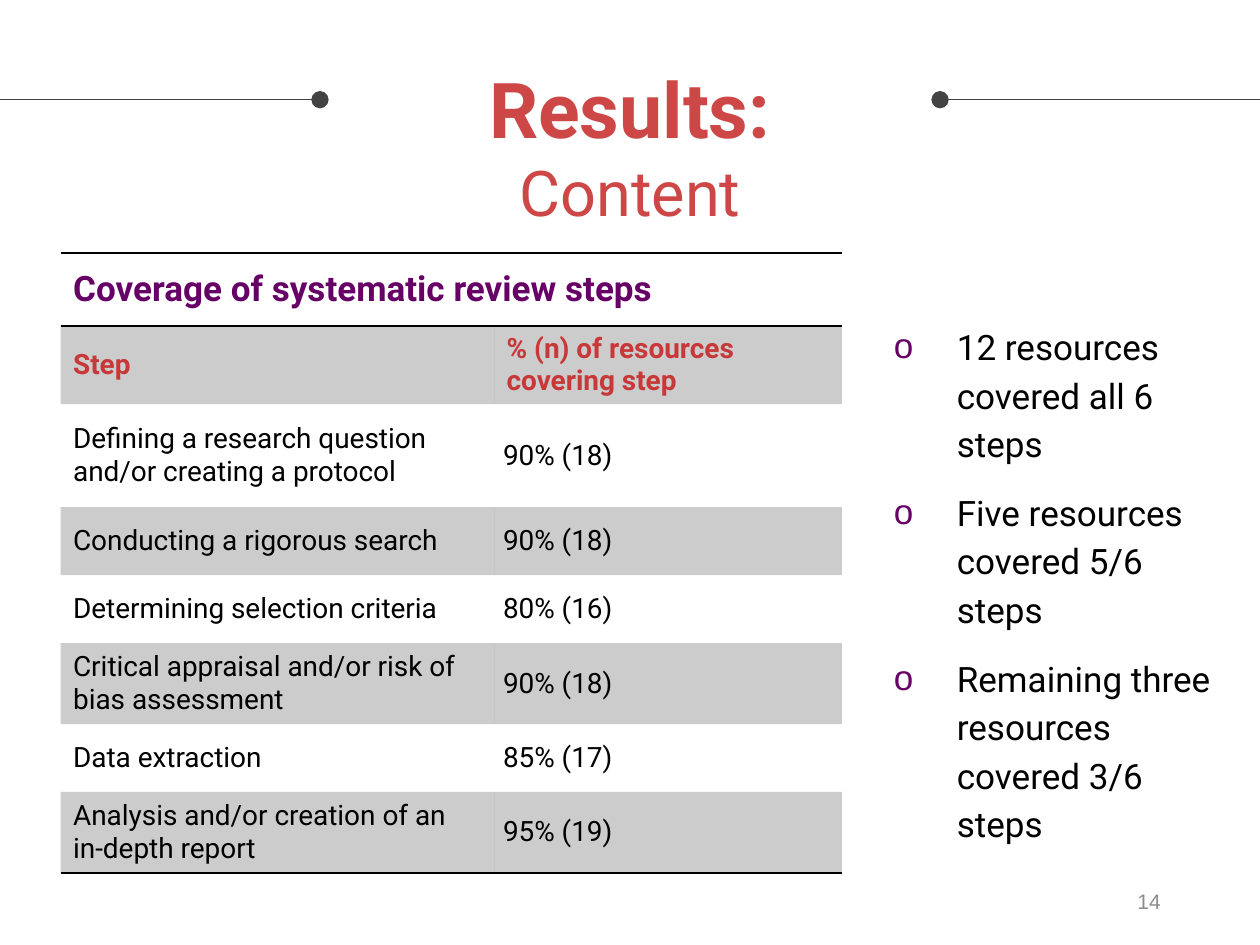
from typing import NamedTuple

from lxml import etree
from pptx import Presentation
from pptx.dml.color import RGBColor
from pptx.enum import shapes, text
from pptx.oxml import ns
from pptx.util import Cm, Pt

RED = RGBColor(0xCD, 0x47, 0x47)
BRICK = RGBColor(0xC8, 0x38, 0x38)
PLUM = RGBColor(0x66, 0x00, 0x66)
BLACK = RGBColor(0, 0, 0)
SLATE = RGBColor(0x43, 0x43, 0x43)
GREY = RGBColor(0x8C, 0x8C, 0x8C)
FACE = "Roboto"
PLAIN = "{2D5ABB26-0587-4C30-8999-92F81FD0307C}"


class Box(NamedTuple):
    left: float
    top: float
    width: float
    height: float


class Row(NamedTuple):
    step: str
    share: str
    height: float


class Rule(NamedTuple):
    start: float
    end: float


RULES = [Rule(6.45, 0), Rule(18.95, 25.4)]
HEAD = Row("Step", "% (n) of resources covering step", 1.22)
STEPS = [
    Row("Defining a research question and/or creating a protocol", "90% (18)", 2.08),
    Row("Conducting a rigorous search", "90% (18)", 1.37),
    Row("Determining selection criteria", "80% (16)", 1.37),
    Row("Critical appraisal and/or risk of bias assessment", "90% (18)", 1.63),
    Row("Data extraction", "85% (17)", 1.37),
    Row("Analysis and/or creation of an in-depth report", "95% (19)", 1.63),
]
NOTES = [
    "12 resources covered all 6 steps",
    "Five resources covered 5/6 steps",
    "Remaining three resources covered 3/6 steps",
]


def add(parent, tag: str, **attrs: str):
    return etree.SubElement(parent, ns.qn(tag), attrs)


def style(font, size: float, color: RGBColor, bold: bool = False, face: str = FACE) -> None:
    font.name, font.size, font.bold = face, Pt(size), bold
    font.color.rgb = color


def place(shape, box: Box) -> None:
    shape.left, shape.top, shape.width, shape.height = map(Cm, box)


def pad(frame, gap: float) -> None:
    frame.margin_left = frame.margin_right = Cm(gap)
    frame.margin_top = frame.margin_bottom = Cm(gap)


def draw_rule(slide, rule: Rule) -> None:
    line = slide.shapes.add_connector(
        shapes.MSO_CONNECTOR.STRAIGHT, Cm(rule.start), Cm(2.01), Cm(rule.end), Cm(2.01))
    line.line.color.rgb = SLATE
    line.line.width = Pt(0.75)
    add(line.line._get_or_add_ln(), "a:headEnd", type="oval", w="lg", len="lg")
    add(line._element.spPr, "a:effectLst")


def draw_title(slide) -> None:
    title = slide.shapes.title
    place(title, Box(5.05, 1.34, 15.3, 3.18))
    frame = title.text_frame
    pad(frame, 0.25)
    frame.auto_size = text.MSO_AUTO_SIZE.NONE
    frame.vertical_anchor = text.MSO_ANCHOR.MIDDLE
    para = frame.paragraphs[0]
    para.alignment = text.PP_ALIGN.CENTER
    top = para.add_run()
    top.text = "Results:"
    style(top.font, 44, RED, True)
    para.add_line_break()
    sub = para.add_run()
    sub.text = "Content"
    style(sub.font, 36, RED)


def edge(cell, *sides: str) -> None:
    props = cell._tc.get_or_add_tcPr()
    for side in sides:
        line = add(props, f"a:ln{side}", w=str(Pt(1)))
        add(add(line, "a:solidFill"), "a:srgbClr", val=str(BLACK))


def shade(cell, dark: bool) -> None:
    if not dark:
        cell.fill.background()
        return
    cell.fill.solid()
    cell.fill.fore_color.rgb = BLACK
    fill = cell._tc.tcPr.find(ns.qn("a:solidFill"))
    add(fill.find(ns.qn("a:srgbClr")), "a:alpha", val="20000")


def write(cell, words: str, size: float, color: RGBColor, bold: bool) -> None:
    cell.vertical_anchor = text.MSO_ANCHOR.MIDDLE
    cell.text = words
    style(cell.text_frame.paragraphs[0].font, size, color, bold)


def draw_table(slide) -> None:
    rows = [HEAD, *STEPS]
    widths = [8.74, 7.01]
    heights = [1.47, *(row.height for row in rows)]
    frame = slide.shapes.add_table(
        len(heights), 2, Cm(1.22), Cm(5.1), Cm(sum(widths)), Cm(sum(heights)))
    table = frame.table
    table.first_row = table.horz_banding = False
    table._tbl.tblPr.find(ns.qn("a:tableStyleId")).text = PLAIN
    for col, width in zip(table.columns, widths):
        col.width = Cm(width)
    for line, height in zip(table.rows, heights):
        line.height = Cm(height)

    top = table.cell(0, 0)
    top.merge(table.cell(0, 1))
    write(top, "Coverage of systematic review steps", 20, PLUM, True)
    for cell in table.rows[0].cells:
        edge(cell, "T", "B")
        shade(cell, False)

    for i, row in enumerate(rows, 1):
        head = row is HEAD
        for j, words in enumerate((row.step, row.share)):
            cell = table.cell(i, j)
            write(cell, words, 16, BRICK if head else BLACK, head)
            if head:
                cell.margin_top = cell.margin_bottom = Cm(0.11)
            elif j:
                pad(cell, 0.18)
            if row is rows[-1]:
                edge(cell, "B")
            shade(cell, i % 2 == 1)
    table.cell(2, 0).text_frame.paragraphs[0].space_after = Pt(12)


def draw_notes(slide) -> None:
    box = slide.shapes.add_textbox(*map(Cm, Box(17.77, 6.19, 7.19, 11.05)))
    frame = box.text_frame
    frame.word_wrap = True
    pad(frame, 0.25)
    for i, note in enumerate(NOTES):
        para = frame.add_paragraph() if i else frame.paragraphs[0]
        para.text = note
        para.line_spacing = 1.15
        para.space_after = Pt(12)
        props = para._p.get_or_add_pPr()
        props.set("marL", str(Cm(1.27)))
        props.set("indent", str(-Cm(1.27)))
        add(add(props, "a:buClr"), "a:srgbClr", val=str(PLUM))
        add(props, "a:buFont", typeface="Arial")
        add(props, "a:buChar", char="o")
        style(para.font, 20, BLACK)


def draw_number(slide) -> None:
    box = slide.shapes.add_textbox(*map(Cm, Box(17.93, 17.65, 5.72, 1.02)))
    frame = box.text_frame
    frame.word_wrap = True
    frame.vertical_anchor = text.MSO_ANCHOR.MIDDLE
    para = frame.paragraphs[0]
    para.text = "14"
    para.alignment = text.PP_ALIGN.RIGHT
    style(para.font, 12, GREY, face="Arial")


def main() -> None:
    deck = Presentation()
    deck.slide_width, deck.slide_height = Cm(25.4), Cm(19.05)
    slide = deck.slides.add_slide(deck.slide_layouts[5])
    for rule in RULES:
        draw_rule(slide, rule)
    draw_title(slide)
    draw_number(slide)
    draw_table(slide)
    draw_notes(slide)
    deck.save("out.pptx")


if __name__ == "__main__":
    main()
